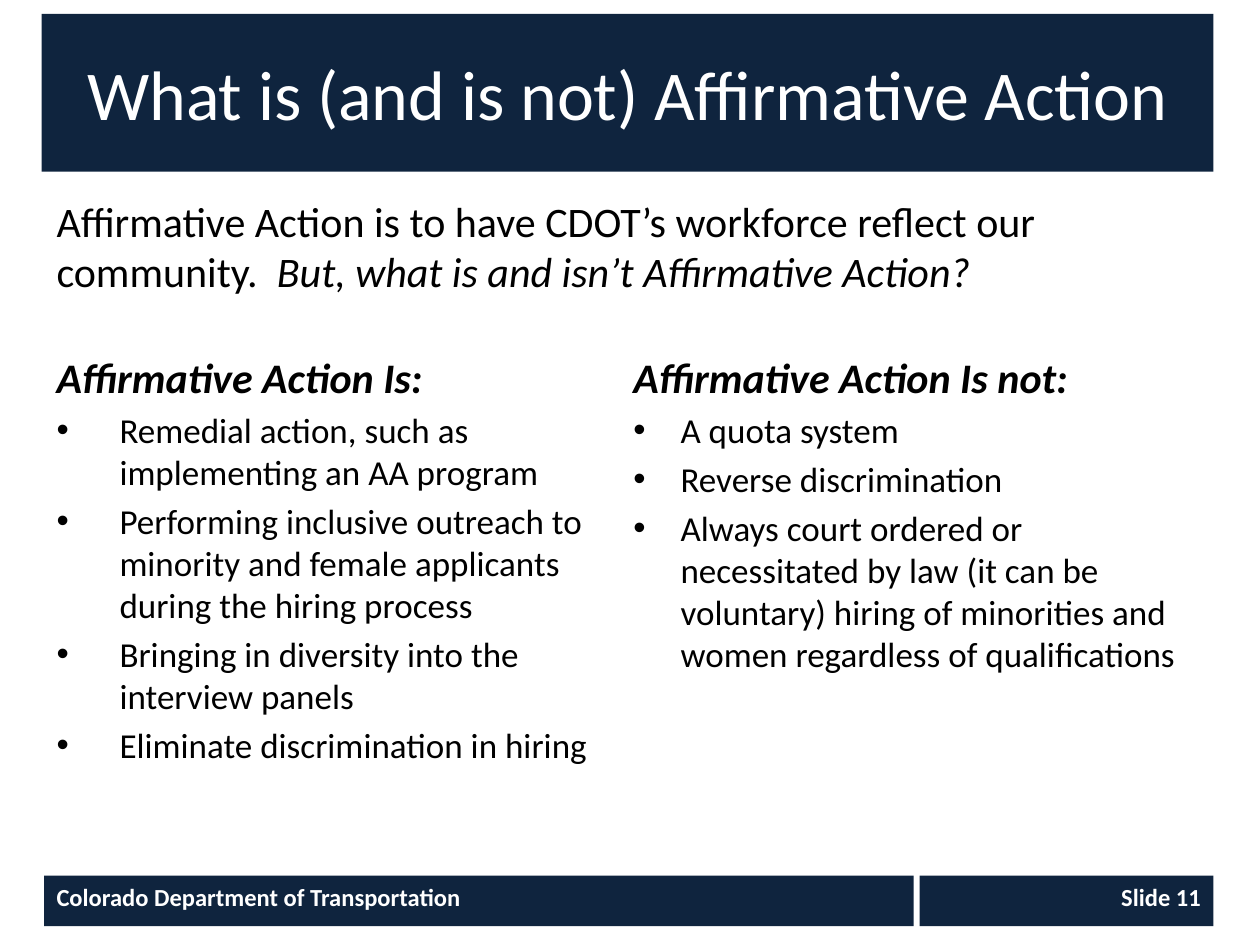
from dataclasses import dataclass
from typing import Optional

import pptx
import pptx.dml.color
import pptx.enum.shapes
import pptx.enum.text
import pptx.util
from lxml import etree

Cm = pptx.util.Cm
Pt = pptx.util.Pt
RGB = pptx.dml.color.RGBColor
ALIGN = pptx.enum.text.PP_ALIGN
ANCHOR = pptx.enum.text.MSO_ANCHOR


@dataclass(frozen=True)
class Theme:
    font: str = "Calibri"
    navy: RGB = RGB(0x0F, 0x24, 0x3E)
    white: RGB = RGB(0xFF, 0xFF, 0xFF)
    black: RGB = RGB(0, 0, 0)
    title_size: int = 40
    lead_size: int = 24
    bullet_size: int = 20
    footer_size: int = 14
    space_ratio: float = 0.2


THEME = Theme()


@dataclass(frozen=True)
class Area:
    """A rectangle in centimetres."""
    left: float
    top: float
    width: float
    height: float


@dataclass(frozen=True)
class Bar:
    area: Area
    wording: str
    size: int
    align: ALIGN
    anchor: ANCHOR = ANCHOR.TOP
    bold: bool = False


@dataclass(frozen=True)
class Column:
    area: Area
    heading: str
    points: tuple[str, ...]
    indent: float
    fill: Optional[RGB] = None


# Content
BARS = (
    Bar(Area(0.84, 0.28, 23.62, 3.18), "What is (and is not) Affirmative Action",
        THEME.title_size, ALIGN.CENTER, ANCHOR.MIDDLE),
    Bar(Area(0.89, 17.65, 17.53, 1.02), "Colorado Department of Transportation",
        THEME.footer_size, ALIGN.LEFT, bold=True),
    Bar(Area(18.54, 17.65, 5.92, 1.02), "Slide 11",
        THEME.footer_size, ALIGN.RIGHT, bold=True),
)
INTRO_AREA = Area(0.89, 3.81, 23.57, 2.79)
INTRO_STATEMENT = "Affirmative Action is to have CDOT’s workforce reflect our community.  "
INTRO_QUESTION = "But, what is and isn’t Affirmative Action?"
COLUMNS = (
    Column(Area(0.89, 6.96, 11.23, 10.16), "Affirmative Action Is:", (
        "Remedial action, such as implementing an AA program",
        "Performing inclusive outreach to minority and female applicants "
        "during the hiring process",
        "Bringing in diversity into the interview panels",
        "Eliminate discrimination in hiring",
    ), indent=1.27),
    Column(Area(12.52, 6.96, 11.84, 10.16), "Affirmative Action Is not:", (
        "A quota system",
        "Reverse discrimination",
        "Always court ordered or necessitated by law (it can be voluntary) "
        "hiring of minorities and women regardless of qualifications",
    ), indent=0.95, fill=THEME.white),
)


def add_frame(slide, area: Area, fill: Optional[RGB] = None, anchor: ANCHOR = ANCHOR.TOP):
    """Add a filled rectangle, or a text box if there is no fill; return its text frame."""
    place = [Cm(length) for length in (area.left, area.top, area.width, area.height)]
    if fill is None:
        panel = slide.shapes.add_textbox(*place)
    else:
        panel = slide.shapes.add_shape(pptx.enum.shapes.MSO_SHAPE.RECTANGLE, *place)
        panel.shadow.inherit = False
        panel.fill.solid()
        panel.fill.fore_color.rgb = fill
        panel.line.fill.background()
    frame = panel.text_frame
    frame.word_wrap = True
    frame.vertical_anchor = anchor
    return frame


def add_run(paragraph, wording: str, size: int, color: RGB = THEME.black, **styles: bool) -> None:
    run = paragraph.add_run()
    run.text = wording
    formats = {"name": THEME.font, "size": Pt(size), **styles}
    for attribute, value in formats.items():
        setattr(run.font, attribute, value)
    run.font.color.rgb = color


def format_body(paragraph, size: int) -> None:
    paragraph.alignment = ALIGN.LEFT
    paragraph.space_before = Pt(size * THEME.space_ratio)


def add_bullet(paragraph, indent: float) -> None:
    properties = paragraph._p.get_or_add_pPr()
    properties.set("marL", str(Cm(indent)))
    properties.set("indent", str(-Cm(indent)))
    for tag, key, value in (("a:buFont", "typeface", "Arial"), ("a:buChar", "char", "•")):
        etree.SubElement(properties, pptx.oxml.ns.qn(tag)).set(key, value)


def draw_bar(slide, bar: Bar) -> None:
    label = add_frame(slide, bar.area, THEME.navy, bar.anchor).paragraphs[0]
    label.alignment = bar.align
    add_run(label, bar.wording, bar.size, THEME.white, bold=bar.bold)


def draw_intro(slide) -> None:
    intro = add_frame(slide, INTRO_AREA).paragraphs[0]
    format_body(intro, THEME.lead_size)
    add_run(intro, INTRO_STATEMENT, THEME.lead_size)
    add_run(intro, INTRO_QUESTION, THEME.lead_size, italic=True)


def draw_column(slide, column: Column) -> None:
    frame = add_frame(slide, column.area, column.fill)
    heading = frame.paragraphs[0]
    format_body(heading, THEME.lead_size)
    add_run(heading, column.heading, THEME.lead_size, bold=True, italic=True)
    for wording in column.points:
        point = frame.add_paragraph()
        format_body(point, THEME.bullet_size)
        add_bullet(point, column.indent)
        add_run(point, wording, THEME.bullet_size)


def main() -> None:
    deck = pptx.Presentation()
    deck.slide_width, deck.slide_height = Cm(25.4), Cm(19.05)
    slide = deck.slides.add_slide(deck.slide_layouts[6])

    # Title and footer bars
    for bar in BARS:
        draw_bar(slide, bar)

    # Introduction and the two columns
    draw_intro(slide)
    for column in COLUMNS:
        draw_column(slide, column)

    deck.save("out.pptx")


if __name__ == "__main__":
    main()
